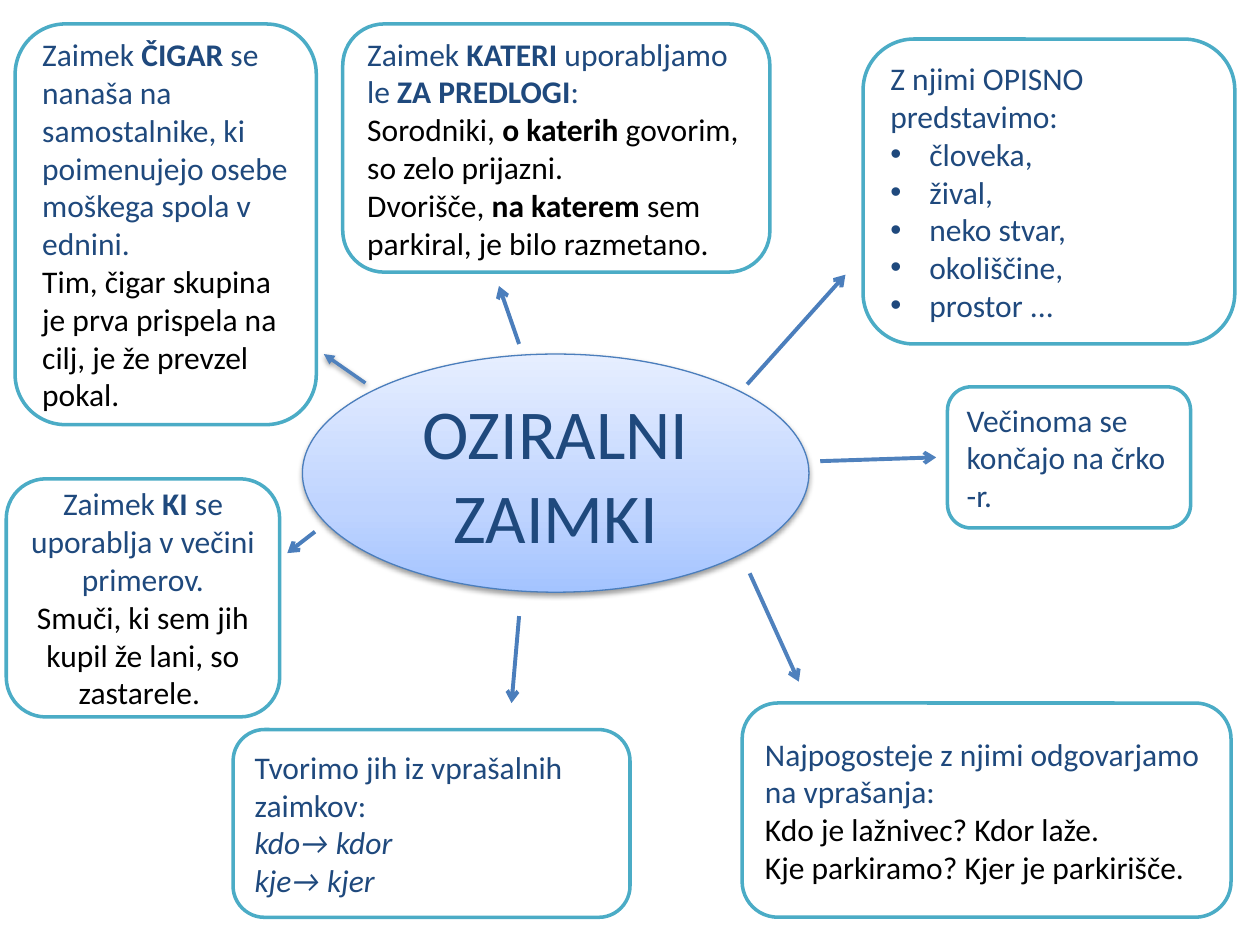
from lxml import etree
from pptx import Presentation
from pptx import util as u
from pptx.dml.color import RGBColor
from pptx.enum import shapes, text
from pptx.oxml import ns

COLORS = {
    "navy": "1F497D",
    "black": "000000",
    "white": "FFFFFF",
    "teal": "4BACC6",
    "blue": "4B7EBC",
    "bright_blue": "4F81BD",
}
OVAL_GRADIENT = [(0, "A4C4FF"), (35, "BFD4FF"), (100, "E6EEFF")]
FONT = "Calibri"
BLACK = {"color": "black"}
BULLET = {"bullet": True}
ITALIC = {"italic": True}
CENTER = {"align": text.PP_ALIGN.CENTER}

# Boxes: left, top, width, height, paragraphs; ** switches bold on and off
BOXES = [
    (6.85, 0.31, 2.95, 2.42, [
        ("Z njimi OPISNO predstavimo:", {}),
        ("človeka,", BULLET),
        ("žival,", BULLET),
        ("neko stvar,", BULLET),
        ("okoliščine,", BULLET),
        ("prostor ...", BULLET),
    ]),
    (2.72, 0.19, 3.39, 1.97, [
        ("Zaimek **KATERI** uporabljamo le **ZA PREDLOGI**:", {}),
        ("Sorodniki, **o katerih **govorim, so zelo prijazni.", BLACK),
        ("Dvorišče, **na katerem **sem parkiral, je bilo razmetano.", BLACK),
    ]),
    (1.85, 5.79, 3.15, 1.49, [
        ("Tvorimo jih iz vprašalnih zaimkov:", {}),
        ("kdo→ kdor", ITALIC),
        ("kje→ kjer", ITALIC),
    ]),
    (7.52, 3.07, 1.93, 1.12, [("Večinoma se končajo na črko -r.", {})]),
    (5.89, 5.58, 3.88, 1.7, [
        ("Najpogosteje z njimi odgovarjamo na vprašanja:", {}),
        ("Kdo je lažnivec? Kdor laže.", BLACK),
        ("Kje parkiramo? Kjer je parkirišče.", BLACK),
    ]),
    (0.05, 3.8, 2.17, 1.89, [
        ("Zaimek **KI** se uporablja v večini primerov.", CENTER),
        ("Smuči, ki sem jih kupil že lani, so zastarele. ", {**CENTER, **BLACK}),
    ]),
    (0.12, 0.19, 2.39, 3.18, [
        ("Zaimek **ČIGAR** se nanaša na samostalnike, ki poimenujejo osebe "
         "moškega spola v ednini.", {}),
        ("Tim, čigar skupina je prva prispela na cilj, je že prevzel pokal.", BLACK),
    ]),
]

# Arrows: start, end, format
ARROWS = [
    ((5.93, 3.05), (6.71, 2.18), {}),
    ((4.12, 2.73), (3.96, 2.27), {}),
    ((6.51, 3.66), (7.43, 3.63), {"color": "bright_blue"}),
    ((4.12, 4.89), (4.06, 5.58), {}),
    ((5.95, 4.55), (6.34, 5.41), {"color": "bright_blue"}),
    ((2.5, 4.22), (2.28, 4.39), {}),
    ((2.9, 3.04), (2.57, 2.81),
     {"color": "bright_blue", "width": 2, "head": "triangle", "shadow": True}),
]


def rgb(name):
    return RGBColor.from_string(COLORS[name])


def add_element(parent, tag, **attributes):
    element = etree.SubElement(parent, ns.qn(tag))
    for name, value in attributes.items():
        element.set(name, str(value))
    return element


def add_effects(properties, shadow):
    """Replace the theme shadow by none, or by a soft one straight below."""
    effects = add_element(properties, "a:effectLst")
    if shadow:
        outer = add_element(effects, "a:outerShdw", blurRad=u.Pt(3.1), dist=u.Pt(1.6),
                            dir=90 * 60000, rotWithShape=0)
        color = add_element(outer, "a:srgbClr", val=COLORS["black"])
        add_element(color, "a:alpha", val=38000)


def write_paragraph(paragraph, content, size=18, color="navy", italic=False,
                    align=text.PP_ALIGN.LEFT, bullet=False):
    paragraph.alignment = align
    if bullet:
        properties = paragraph._p.get_or_add_pPr()
        properties.set("marL", str(u.Inches(0.31)))
        properties.set("indent", str(-u.Inches(0.31)))
        add_element(properties, "a:buFont", typeface="Arial")
        add_element(properties, "a:buChar", char="•")
    for index, part in enumerate(content.split("**")):
        run = paragraph.add_run()
        run.text = part
        font = run.font
        font.name, font.size = FONT, u.Pt(size)
        font.bold, font.italic = index % 2 == 1, italic
        font.color.rgb = rgb(color)


def add_text_shape(slide, kind, box, paragraphs, line_color, line_width):
    shape = slide.shapes.add_shape(kind, *map(u.Inches, box))
    shape.line.color.rgb = rgb(line_color)
    shape.line.width = u.Pt(line_width)
    frame = shape.text_frame
    frame.word_wrap = True
    frame.vertical_anchor = text.MSO_ANCHOR.MIDDLE
    for index, (content, style) in enumerate(paragraphs):
        paragraph = frame.add_paragraph() if index else frame.paragraphs[0]
        write_paragraph(paragraph, content, **style)
    return shape


def add_topic(slide):
    shape = add_text_shape(slide, shapes.MSO_SHAPE.OVAL, (2.4, 2.81, 4.02, 1.89),
                           [("OZIRALNI ZAIMKI", {"size": 40, **CENTER})], "blue", 0.75)
    shape.fill.gradient()
    shape.fill.gradient_angle = 90
    properties = shape._element.spPr
    stops = properties.find(".//" + ns.qn("a:gsLst"))
    for stop in list(stops):
        stops.remove(stop)
    for position, color in OVAL_GRADIENT:
        stop = add_element(stops, "a:gs", pos=position * 1000)
        add_element(stop, "a:srgbClr", val=color)
    add_effects(properties, shadow=True)


def add_box(slide, box, paragraphs):
    shape = add_text_shape(slide, shapes.MSO_SHAPE.ROUNDED_RECTANGLE, box,
                           paragraphs, "teal", 2)
    shape.fill.solid()
    shape.fill.fore_color.rgb = rgb("white")
    shape.shadow.inherit = False


def add_arrow(slide, start, end, color="blue", width=2.25, head="arrow", shadow=False):
    connector = slide.shapes.add_connector(
        shapes.MSO_CONNECTOR.STRAIGHT, *map(u.Inches, start + end))
    connector.line.color.rgb = rgb(color)
    connector.line.width = u.Pt(width)
    add_element(connector.line._get_or_add_ln(), "a:tailEnd", type=head)
    add_effects(connector._element.spPr, shadow)


def main():
    presentation = Presentation()
    presentation.slide_width = u.Inches(10)
    presentation.slide_height = u.Inches(7.5)
    slide = presentation.slides.add_slide(presentation.slide_layouts[6])

    # Topic in the middle
    add_topic(slide)

    # Explanations around it
    for *box, paragraphs in BOXES:
        add_box(slide, box, paragraphs)

    # Arrows from the topic to the explanations
    for start, end, style in ARROWS:
        add_arrow(slide, start, end, **style)

    presentation.save("out.pptx")


if __name__ == "__main__":
    main()
